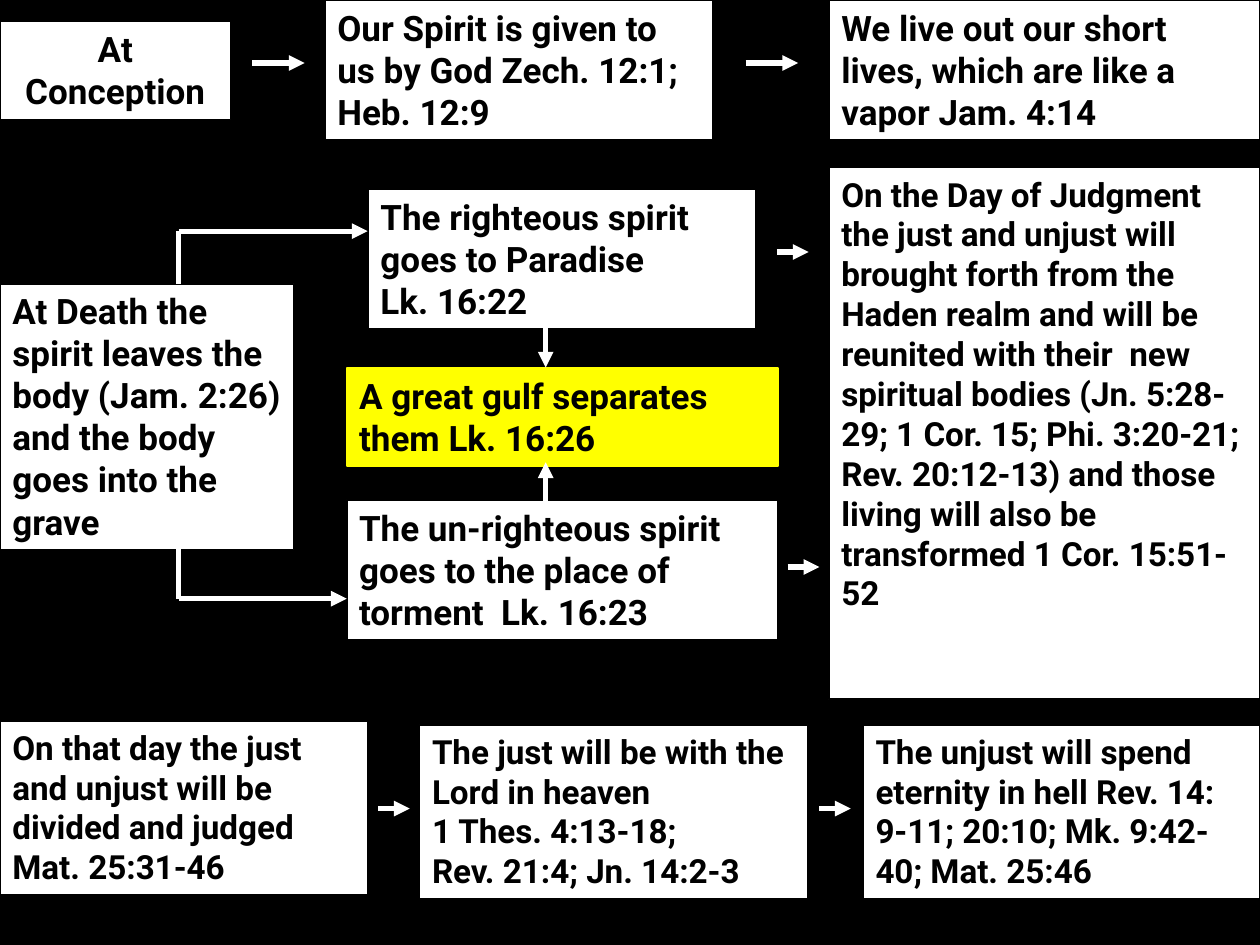
from lxml.etree import SubElement
from pptx import Presentation
from pptx.dml.color import RGBColor
from pptx.enum.shapes import MSO_CONNECTOR as CONN, MSO_SHAPE as SHAPE
from pptx.enum.text import MSO_ANCHOR as ANCHOR, PP_ALIGN as ALIGN
from pptx.oxml.ns import qn
from pptx.util import Cm, Pt

BLACK, WHITE, YELLOW = "000000", "FFFFFF", "FFFF00"


def rgb(value):
    return RGBColor.from_string(value)


class Flow:
    font = "Roboto"
    arrow_width = 3

    def __init__(self, prs):
        self.s = prs.slides.add_slide(prs.slide_layouts[6])
        fill = self.s.background.fill
        fill.solid()
        fill.fore_color.rgb = rgb(BLACK)

    def box(self, x, y, w, h, text, size=20, fill=WHITE, line=BLACK, align=ALIGN.LEFT):
        sp = self.s.shapes.add_shape(SHAPE.RECTANGLE, Cm(x), Cm(y), Cm(w), Cm(h))
        sp.shadow.inherit = False
        sp.fill.solid()
        sp.fill.fore_color.rgb = rgb(fill)
        sp.line.color.rgb = rgb(line)
        sp.line.width = Pt(1)
        tf = sp.text_frame
        tf.word_wrap = True
        tf.vertical_anchor = ANCHOR.TOP
        tf.text = text
        for p in tf.paragraphs:
            p.alignment = align
            for r in p.runs:
                r.font.name = self.font
                r.font.size = Pt(size)
                r.font.bold = True
                r.font.color.rgb = rgb(BLACK)

    def line(self, x1, y1, x2, y2, head=True):
        cxn = self.s.shapes.add_connector(CONN.STRAIGHT, Cm(x1), Cm(y1), Cm(x2), Cm(y2))
        cxn.line.color.rgb = rgb(WHITE)
        cxn.line.width = Pt(self.arrow_width)
        if head:
            SubElement(cxn.line._get_or_add_ln(), qn("a:tailEnd"), type="triangle")
        SubElement(cxn._element.spPr, qn("a:effectLst"))

    def right_arrow(self, x, y, length):
        self.line(x, y, x + length, y)

    def branch(self, x, y_start, x_end, y_end):
        self.line(x, y_end, x_end, y_end)
        self.line(x, y_start, x, y_end, head=False)


def main():
    prs = Presentation()
    prs.slide_width, prs.slide_height = Cm(25.4), Cm(19.05)
    flow = Flow(prs)

    flow.box(0, 0.43, 4.65, 1.98, "At Conception", align=ALIGN.CENTER)
    flow.box(6.55, 0, 7.82, 2.82, "Our Spirit is given to us by God Zech. 12:1; Heb. 12:9")
    flow.box(16.71, 0, 8.69, 2.82,
             "We live out our short lives, which are like a vapor Jam. 4:14")

    flow.box(0, 5.72, 5.92, 5.36,
             "At Death the spirit leaves the body (Jam. 2:26) and the body "
             "goes into the grave")
    flow.box(7.42, 3.81, 7.82, 2.82, "The righteous spirit goes to Paradise \vLk. 16:22")
    flow.box(6.99, 10.08, 8.69, 2.82,
             "The un-righteous spirit goes to the place of torment  Lk. 16:23")
    flow.box(6.99, 7.42, 8.69, 1.98, "A great gulf separates them Lk. 16:26",
             fill=YELLOW, line=YELLOW)
    flow.box(16.71, 3.38, 8.69, 10.72,
             "On the Day of Judgment the just and unjust will brought forth from "
             "the Haden realm and will be reunited with their  new spiritual bodies "
             "(Jn. 5:28-29; 1 Cor. 15; Phi. 3:20-21; Rev. 20:12-13) and those living "
             "will also be transformed 1 Cor. 15:51-52", size=19)

    flow.box(0, 14.53, 7.42, 3.51,
             "On that day the just and unjust will be divided and judged "
             "Mat. 25:31-46", size=19)
    flow.box(8.46, 14.61, 7.82, 3.51,
             "The just will be with the Lord in heaven \v1 Thes. 4:13-18;\v"
             "Rev. 21:4; Jn. 14:2-3", size=19)
    flow.box(17.4, 14.61, 8, 3.51,
             "The unjust will spend eternity in hell Rev. 14: 9-11; 20:10; "
             "Mk. 9:42-40; Mat. 25:46", size=19)

    for x in (5.08, 15.03):
        flow.right_arrow(x, 1.27, 1.06)
    for x, y in ((7.62, 16.3), (16.51, 16.3), (15.88, 11.43), (15.66, 5.08)):
        flow.right_arrow(x, y, 0.64)
    flow.line(11, 10.16, 11, 9.32)
    flow.line(11, 6.56, 11, 7.41)
    flow.branch(3.6, 5.72, 7.41, 4.66)
    flow.branch(3.6, 11.01, 6.99, 12.07)

    prs.save("out.pptx")


if __name__ == "__main__":
    main()
